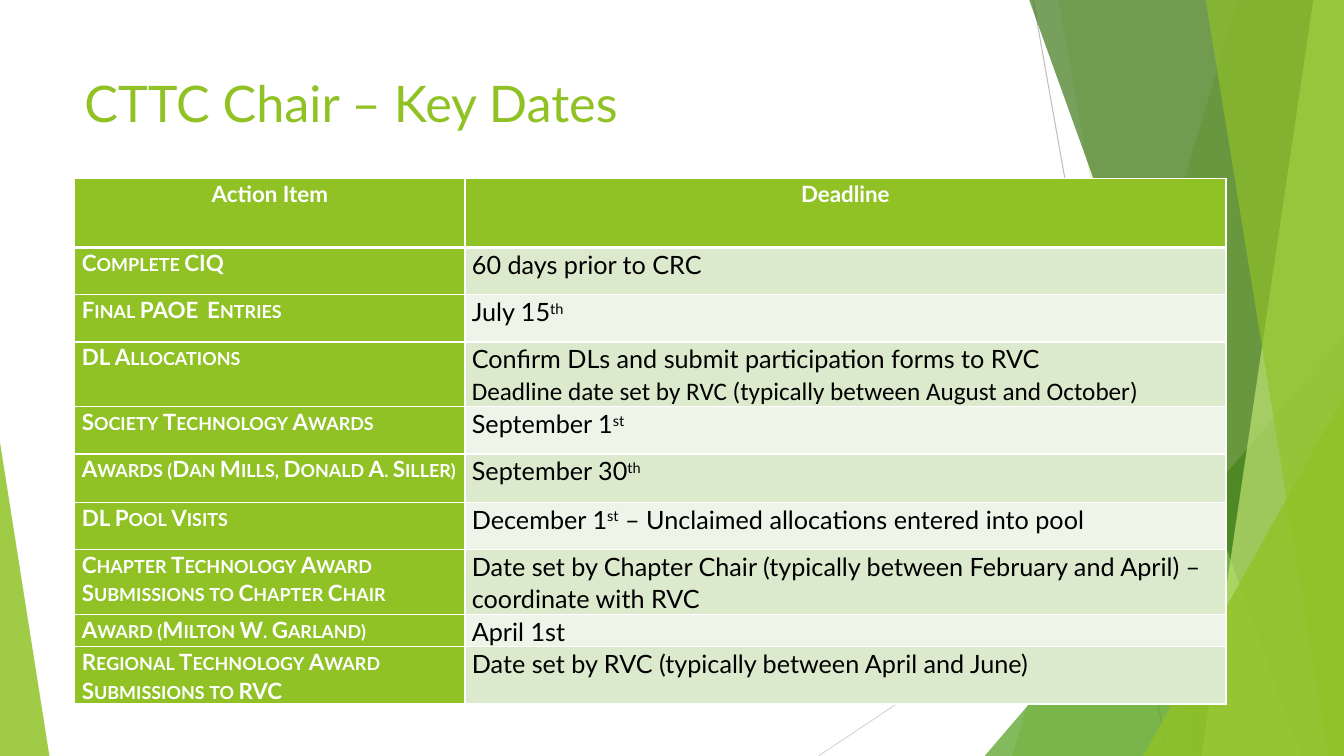
"""Build the CTTC Chair key dates slide."""
from lxml.etree import SubElement
from pptx import Presentation
from pptx.dml.color import RGBColor
from pptx.enum.shapes import MSO_CONNECTOR, MSO_SHAPE
from pptx.enum.text import MSO_ANCHOR, PP_ALIGN
from pptx.oxml.ns import qn
from pptx.util import Pt

TITLE = "CTTC Chair – Key Dates"
HEADINGS = ("Action Item", "Deadline")
KEY_DATES = [
    ("Complete CIQ", [("60 days prior to CRC",)]),
    ("Final PAOE  Entries", [("July 15", "th")]),
    ("DL Allocations", [
        ("Confirm DLs and submit participation forms to RVC",),
        ("Deadline date set by RVC (typically between August and October)",)]),
    ("Society Technology Awards", [("September 1", "st")]),
    ("Awards (Dan Mills, Donald A. Siller)", [("September 30", "th")]),
    ("DL Pool Visits", [("December 1", "st", " – Unclaimed allocations entered into pool")]),
    ("Chapter Technology Award Submissions to Chapter Chair", [
        ("Date set by Chapter Chair (typically between February and April) – coordinate with RVC",)]),
    ("Award (Milton W. Garland)", [("April 1st",)]),
    ("Regional Technology Award Submissions to RVC", [
        ("Date set by RVC (typically between April and June)",)]),
]
COLUMN_WIDTHS = (278.6, 543.6)
ROW_HEIGHTS = (49, 33.8, 33.8, 33.8, 33.8, 34.4, 33.8, 20.2, 20.2, 20.2)

THEME = {
    "green": "90C226", "leaf": "54A021", "forest": "3F7819", "lime": "C0E474",
    "white": "FFFFFF", "black": "000000", "bands": ("DBE9CD", "EEF4E8"),
    "font": "Lato", "detail_font": "Calibri",
    "title_size": 36, "label_size": 16, "body_size": 18,
}
WIDTH, HEIGHT, BLEED = 960, 540, -0.6
RAYS = [((738, 0), (833.8, HEIGHT), "BFBFBF"), ((WIDTH, 290.2), (584.6, HEIGHT), "D9D9D9")]
FACETS = [
    {"slab": (884.2, 723), "color": "green", "opacity": 30},
    {"slab": (756, 851.8), "color": "green", "opacity": 20},
    {"triangle": (703.4, 239.8, 256.6), "apex": 1, "color": "leaf", "opacity": 72},
    {"slab": (735, 929.5), "color": "forest", "opacity": 70},
    {"slab": (938.2, 858.2), "color": "lime", "opacity": 70},
    {"slab": (861.1, 949), "color": "green", "opacity": 65},
    {"triangle": (816.5, 283, 143.5), "apex": 1, "color": "green", "opacity": 80},
    {"triangle": (0, 316, 35.3), "apex": 0, "color": "green", "opacity": 85},
]


def apply(target, values):
    for name, value in values.items():
        setattr(target, name, value)


def paint(fill, color):
    fill.solid()
    fill.fore_color.rgb = RGBColor.from_string(color)


def add_span(para, text, size, color, font=THEME["font"], bold=False, **marks):
    span = para.add_run()
    span.text = text
    apply(span.font, {"size": Pt(size), "name": font, "bold": bold})
    span.font.color.rgb = RGBColor.from_string(color)
    for name, value in marks.items():
        span.font._element.set(name, value)


def draw_ray(page, start, end, color):
    ray = page.shapes.add_connector(MSO_CONNECTOR.STRAIGHT, *map(Pt, start + end))
    ray.line.width = Pt(0.75)
    ray.line.color.rgb = RGBColor.from_string(color)
    SubElement(ray._element.spPr, qn("a:effectLst"))


def draw_facet(page, facet):
    if "slab" in facet:
        top, bottom = facet["slab"]
        builder = page.shapes.build_freeform(Pt(top), Pt(BLEED))
        corners = [(WIDTH, BLEED), (WIDTH, HEIGHT), (bottom, HEIGHT)]
        builder.add_line_segments([(Pt(x), Pt(y)) for x, y in corners], close=True)
        shape = builder.convert_to_shape()
    else:
        left, top, width = facet["triangle"]
        box = map(Pt, (left, top, width, HEIGHT - top))
        shape = page.shapes.add_shape(MSO_SHAPE.ISOSCELES_TRIANGLE, *box)
        shape.adjustments[0] = facet["apex"]
    shape.shadow.inherit = False
    shape.line.fill.background()
    paint(shape.fill, THEME[facet["color"]])
    tint = shape._element.spPr.find(qn("a:solidFill"))[0]
    SubElement(tint, qn("a:alpha"), val=str(facet["opacity"] * 1000))


def draw_title(page):
    box = page.shapes.add_textbox(Pt(53.3), Pt(48), Pt(676.8), Pt(103.7))
    apply(box.text_frame, {"word_wrap": True, "vertical_anchor": MSO_ANCHOR.TOP})
    add_span(box.text_frame.paragraphs[0], TITLE, THEME["title_size"], THEME["green"])


def style_cell(cell, color, borders):
    apply(cell, {"margin_left": Pt(5), "margin_right": Pt(5), "margin_top": 0, "margin_bottom": 0})
    properties = cell._tc.get_or_add_tcPr()
    for side, width in borders.items():
        edge = SubElement(properties, qn(f"a:ln{side}"), w=str(Pt(width)))
        SubElement(SubElement(edge, qn("a:solidFill")), qn("a:srgbClr"), val=THEME["white"])
    paint(cell.fill, color)


def add_para(cell, index, align=PP_ALIGN.LEFT):
    frame = cell.text_frame
    para = frame.add_paragraph() if index else frame.paragraphs[0]
    apply(para, {"alignment": align, "line_spacing": 1.07})
    return para


def draw_table(page):
    frame = page.shapes.add_table(
        len(ROW_HEIGHTS), len(COLUMN_WIDTHS), Pt(53.5), Pt(127.7),
        Pt(sum(COLUMN_WIDTHS)), Pt(sum(ROW_HEIGHTS)))
    table = frame.table
    for column, width in zip(table.columns, COLUMN_WIDTHS):
        column.width = Pt(width)
    for row, height in zip(table.rows, ROW_HEIGHTS):
        row.height = Pt(height)
    label = {"size": THEME["label_size"], "color": THEME["white"], "bold": True}

    for column, heading in enumerate(HEADINGS):
        cell = table.cell(0, column)
        style_cell(cell, THEME["green"], {"L": 1, "R": 1, "T": 1, "B": 3})
        add_span(add_para(cell, 0, PP_ALIGN.CENTER), heading, **label)

    for row, (action, deadline) in enumerate(KEY_DATES, start=1):
        borders = {"L": 1, "R": 1, "T": 3 if row == 1 else 1, "B": 1}
        action_cell, deadline_cell = table.cell(row, 0), table.cell(row, 1)
        style_cell(action_cell, THEME["green"], borders)
        add_span(add_para(action_cell, 0), action, cap="small", **label)
        style_cell(deadline_cell, THEME["bands"][(row - 1) % 2], borders)
        for index, spans in enumerate(deadline):
            para = add_para(deadline_cell, index)
            font = THEME["detail_font"] if index else THEME["font"]
            for position, text in enumerate(spans):
                marks = {"baseline": "30000"} if position % 2 else {}
                add_span(para, text, THEME["body_size"], THEME["black"], font, **marks)


def main():
    deck = Presentation()
    apply(deck, {"slide_width": Pt(WIDTH), "slide_height": Pt(HEIGHT)})
    page = deck.slides.add_slide(deck.slide_layouts[6])
    paint(page.background.fill, THEME["white"])
    for ray in RAYS:
        draw_ray(page, *ray)
    for facet in FACETS:
        draw_facet(page, facet)
    draw_title(page)
    draw_table(page)
    deck.save("out.pptx")


if __name__ == "__main__":
    main()
